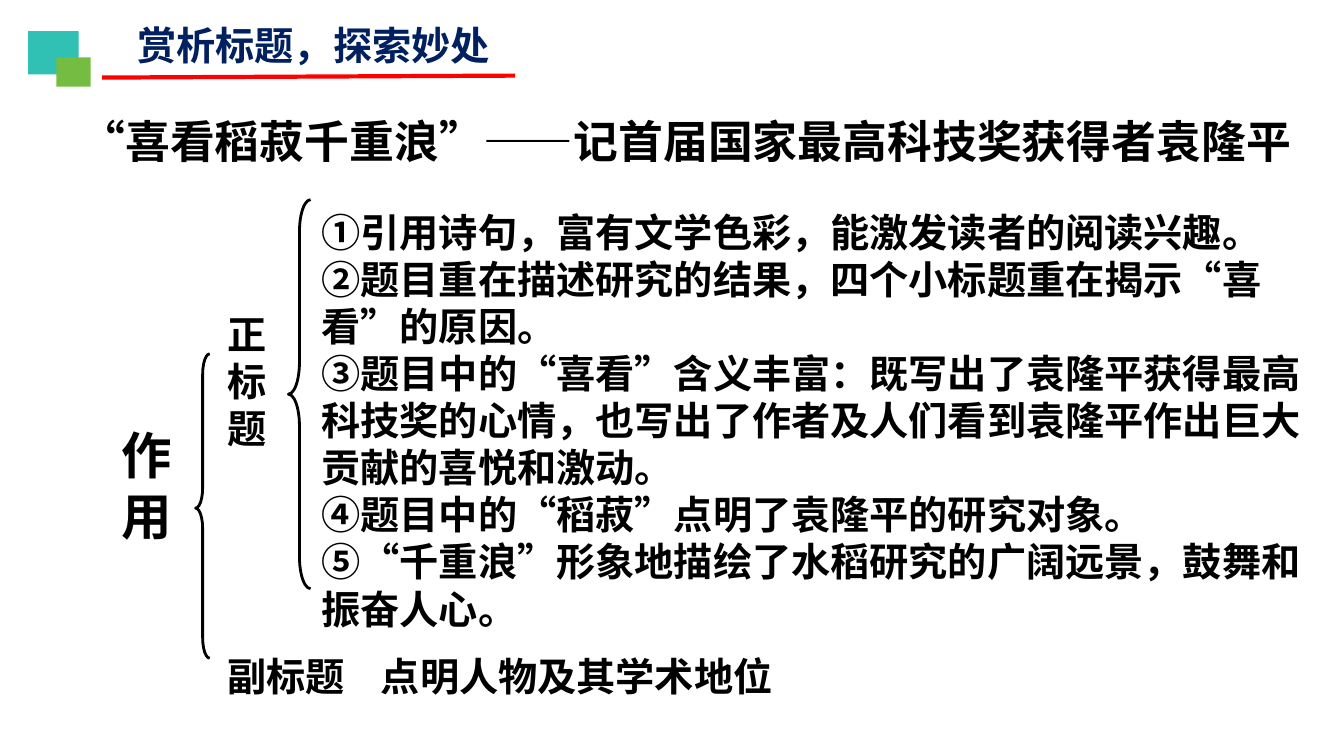
from lxml import etree
from pptx import Presentation, util as u
from pptx.dml.color import RGBColor
from pptx.enum import shapes, text
from pptx.oxml.ns import qn

COLORS = {"ink": "000000", "navy": "002060", "red": "FF0000",
          "teal": "30C0B4", "green": "75BD42"}
SANS_SC, SANS_JP = "Noto Sans CJK SC", "Noto Sans CJK JP"
LINE_RATIO = 1.2
MAIN_POINTS = [
    "①引用诗句，富有文学色彩，能激发读者的阅读兴趣。",
    "②题目重在描述研究的结果，四个小标题重在揭示“喜看”的原因。",
    "③题目中的“喜看”含义丰富：既写出了袁隆平获得最高科技奖的心情，"
    "也写出了作者及人们看到袁隆平作出巨大贡献的喜悦和激动。",
    "④题目中的“稻菽”点明了袁隆平的研究对象。",
    "⑤“千重浪”形象地描绘了水稻研究的广阔远景，鼓舞和振奋人心。",
]


def color(name):
    return RGBColor.from_string(COLORS[name])


def inches(*lengths):
    return [u.Inches(length) for length in lengths]


def within(box, left, top, width, height):
    return box[0] + left, box[1] + top, width, height


def add_text(page, box, lines, size=28, face=SANS_JP, ink="ink",
             align=text.PP_ALIGN.LEFT):
    frame = page.shapes.add_textbox(*inches(*box)).text_frame
    layout = {"word_wrap": True, "auto_size": text.MSO_AUTO_SIZE.NONE,
              "margin_top": u.Inches(0.09), "margin_bottom": 0}
    for name, value in layout.items():
        setattr(frame, name, value)
    for index, line in enumerate(lines):
        para = frame.add_paragraph() if index else frame.paragraphs[0]
        para.alignment = align
        para.line_spacing = u.Pt(size * LINE_RATIO)
        span = para.add_run()
        span.text = line
        for name, value in {"size": u.Pt(size), "bold": True, "name": face}.items():
            setattr(span.font, name, value)
        span.font.color.rgb = color(ink)
        properties = span.font._element
        properties.set("lang", "zh-CN")
        etree.SubElement(properties, qn("a:ea")).set("typeface", face)


def add_square(group, box, fill):
    square = group.shapes.add_shape(shapes.MSO_SHAPE.RECTANGLE, *inches(*box))
    square.shadow.inherit = False
    square.fill.solid()
    square.fill.fore_color.rgb = color(fill)
    square.line.fill.background()


def add_brace(page, box, middle):
    brace = page.shapes.add_shape(shapes.MSO_SHAPE.RIGHT_BRACE, *inches(*box))
    brace.shadow.inherit = False
    brace.rotation = 180
    brace.adjustments[0] = 1.44
    brace.adjustments[1] = middle
    brace.fill.background()
    brace.line.color.rgb = color("ink")
    brace.line.width = u.Pt(2)


def add_heading(page, box):
    rule = page.shapes.add_connector(
        shapes.MSO_CONNECTOR.STRAIGHT,
        *inches(box[0] + 0.73, box[1] + 0.65, box[0] + box[2], box[1] + 0.63))
    rule.line.color.rgb = color("red")
    rule.line.width = u.Pt(3)
    etree.SubElement(rule._element.spPr, qn("a:effectLst"))
    emblem = page.shapes.add_group_shape()
    add_square(emblem, within(box, 0, 0.19, 0.5, 0.43), "teal")
    add_square(emblem, within(box, 0.28, 0.45, 0.34, 0.29), "green")
    add_text(page, within(box, 0.73, 0, 4.2, 0.57), ["赏析标题，探索妙处"],
             face=SANS_SC, ink="navy", align=text.PP_ALIGN.CENTER)


def add_main_title(page, box):
    add_text(page, within(box, 0, 1.01, 0.59, 1.51), ["正标题"])
    add_brace(page, within(box, 0.7, 0, 0.22, 3.86), 0.5)
    add_text(page, within(box, 0.93, 0, box[2] - 0.93, box[3]), MAIN_POINTS)


def add_subtitle(page, box):
    add_text(page, within(box, 0, 0, 1.41, box[3]), ["副标题"])
    add_text(page, within(box, 1.52, 0, box[2] - 1.52, box[3]),
             ["点明人物及其学术地位"])


def add_analysis(page, box):
    add_text(page, within(box, 0, 2.14, 0.82, 1.31), ["作用"], 36, SANS_SC)
    add_brace(page, within(box, 0.83, 1.53, 0.14, 3.02), 0.493)
    add_main_title(page, within(box, 1.05, 0, box[2] - 1.05, 4.34))
    add_subtitle(page, within(box, 1.05, 4.4, 6.92, 0.57))


def main():
    deck = Presentation()
    deck.slide_width, deck.slide_height = inches(13.33, 7.5)
    page = deck.slides.add_slide(deck.slide_layouts[6])
    add_heading(page, (0.28, 0.12, 4.83, 0.75))
    add_text(page, (0.7, 1.04, 12.34, 0.64),
             ["“喜看稻菽千重浪”——记首届国家最高科技奖获得者袁隆平"], 32, SANS_SC)
    add_analysis(page, (1.11, 1.98, 11.93, 4.97))
    deck.save("out.pptx")


if __name__ == "__main__":
    main()
